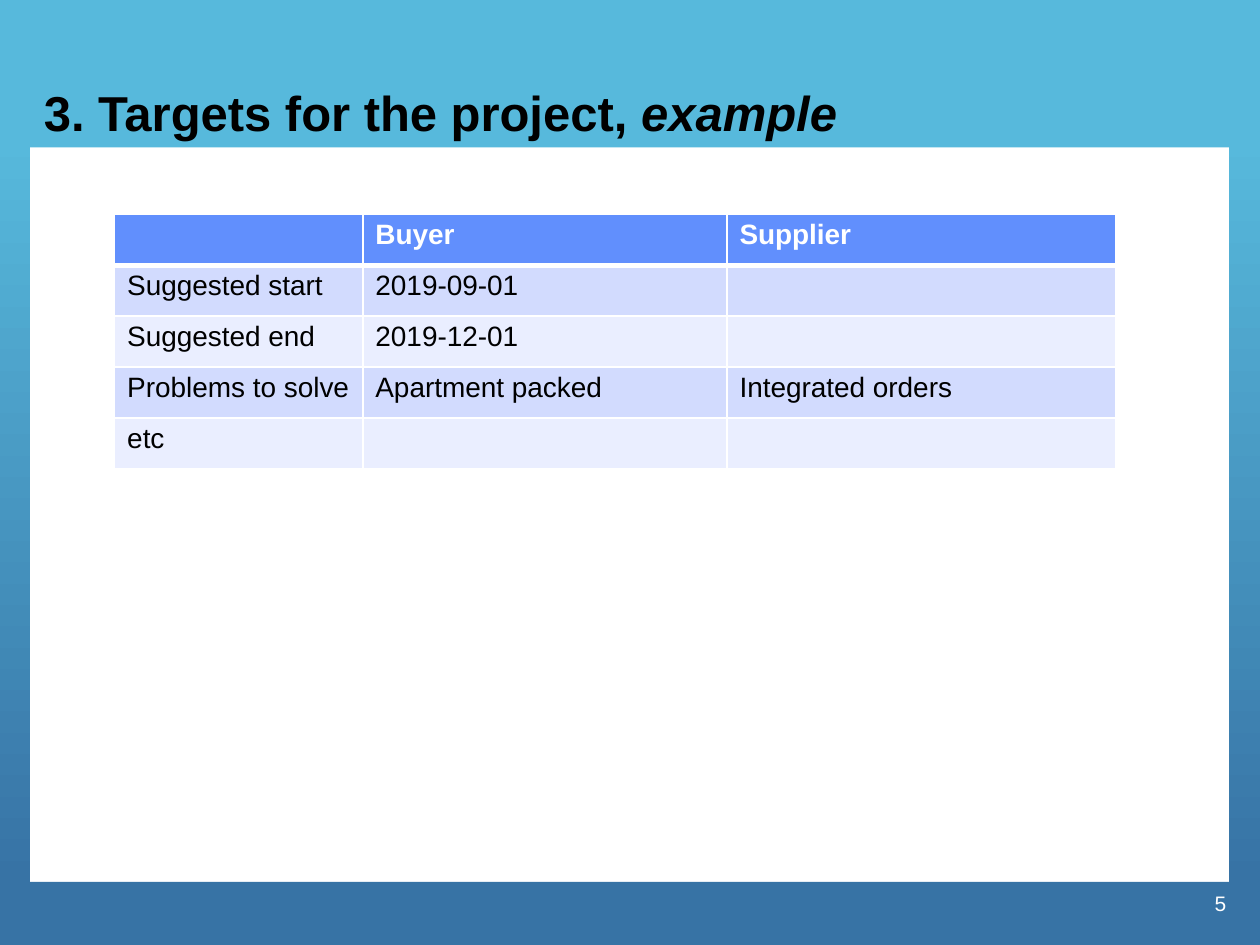
from lxml import etree
from pptx import Presentation
from pptx.dml.color import RGBColor
from pptx.enum.shapes import MSO_SHAPE
from pptx.enum.text import MSO_ANCHOR, PP_ALIGN
from pptx.oxml.ns import qn
from pptx.util import Inches, Pt

RECTANGLE = MSO_SHAPE.RECTANGLE
LEFT, RIGHT = PP_ALIGN.LEFT, PP_ALIGN.RIGHT
MIDDLE, BOTTOM = MSO_ANCHOR.MIDDLE, MSO_ANCHOR.BOTTOM
FONT = "Arial"
SKY, OCEAN, WHITE, BLACK = "57B9DC", "3773A5", "FFFFFF", "000000"
HEADER_FILL, BAND_FILLS = "618FFD", ("D2DBFE", "EAEEFF")
COLUMN_WIDTHS = (1.97, 2.89, 3.09)
ROW_HEIGHT = 0.405
TARGETS = (
    ("", "Buyer", "Supplier"),
    ("Suggested start", "2019-09-01", ""),
    ("Suggested end", "2019-12-01", ""),
    ("Problems to solve", "Apartment packed", "Integrated orders"),
    ("etc", "", ""),
)


def color(hex_value):
    """Turn a hex string into a colour."""
    return RGBColor.from_string(hex_value)


def style_font(font, size, hex_value, bold=False):
    """Set the face, size, colour and weight of a font."""
    font.name = FONT
    font.size = Pt(size)
    font.bold = bold
    font.color.rgb = color(hex_value)


def add_band(slide, left, top, width, height, *colors):
    """Add a frame band filled with one colour or a downward gradient."""
    band = slide.shapes.add_shape(
        RECTANGLE, Inches(left), Inches(top), Inches(width), Inches(height))
    band.shadow.inherit = False
    band.line.fill.background()
    if len(colors) == 1:
        band.fill.solid()
        band.fill.fore_color.rgb = color(colors[0])
        return
    band.fill.gradient()
    band.fill.gradient_angle = 270
    for stop, hex_value in zip(band.fill.gradient_stops, colors):
        stop.color.rgb = color(hex_value)


def add_text(slide, left, top, width, height, parts, size, hex_value,
             align=LEFT, anchor=MIDDLE, bold=False):
    """Add a one-line text made of (wording, italic) parts."""
    box = slide.shapes.add_textbox(
        Inches(left), Inches(top), Inches(width), Inches(height))
    frame = box.text_frame
    frame.word_wrap = True
    frame.vertical_anchor = anchor
    line = frame.paragraphs[0]
    line.alignment = align
    for wording, italic in parts:
        run = line.add_run()
        run.text = wording
        style_font(run.font, size, hex_value, bold)
        run.font.italic = italic


def add_border(cell, side, points):
    """Draw a white border on one side of a cell."""
    border = etree.SubElement(
        cell._tc.get_or_add_tcPr(), qn(f"a:ln{side}"), w=str(Pt(points)))
    fill = etree.SubElement(border, qn("a:solidFill"))
    etree.SubElement(fill, qn("a:srgbClr"), val=WHITE)


def fill_cell(cell, wording, row):
    """Give a cell its wording, borders and band colour."""
    header = row == 0
    thickness = {"L": 1, "R": 1, "T": 3 if row == 1 else 1, "B": 3 if header else 1}
    for side, points in thickness.items():
        add_border(cell, side, points)
    cell.fill.solid()
    cell.fill.fore_color.rgb = color(HEADER_FILL if header else BAND_FILLS[(row - 1) % 2])
    cell.margin_top = Inches(0.04)
    cell.margin_right = Inches(0.05)
    cell.text_frame.text = wording
    style_font(cell.text_frame.paragraphs[0].font, 16, WHITE if header else BLACK, header)


def add_targets_table(slide, left, top):
    """Add the table of buyer and supplier targets."""
    table = slide.shapes.add_table(
        len(TARGETS), len(COLUMN_WIDTHS), Inches(left), Inches(top),
        Inches(sum(COLUMN_WIDTHS)), Inches(ROW_HEIGHT * len(TARGETS))).table
    for column, width in zip(table.columns, COLUMN_WIDTHS):
        column.width = Inches(width)
    for row, wordings in enumerate(TARGETS):
        table.rows[row].height = Inches(ROW_HEIGHT)
        for column, wording in enumerate(wordings):
            fill_cell(table.cell(row, column), wording, row)


def main():
    """Build the slide and save it."""
    deck = Presentation()
    deck.slide_width, deck.slide_height = Inches(10), Inches(7.5)
    slide = deck.slides.add_slide(deck.slide_layouts[6])
    add_band(slide, -0.01, 1.08, 0.25, 5.92, SKY, OCEAN)
    add_band(slide, 0, 7, 10, 0.5, OCEAN)
    add_band(slide, 0, 0, 10, 1.17, SKY)
    add_band(slide, 9.75, 1.08, 0.25, 5.92, SKY, OCEAN)
    add_text(slide, 7.75, 6.92, 2.08, 0.5, [("5", False)], 12, WHITE, align=RIGHT)
    add_text(slide, 0.25, 0.17, 9.5, 1,
             [("3. Targets for the project, ", False), ("example", True)],
             28, BLACK, anchor=BOTTOM, bold=True)
    add_targets_table(slide, 0.91, 1.7)
    deck.save("out.pptx")


if __name__ == "__main__":
    main()
